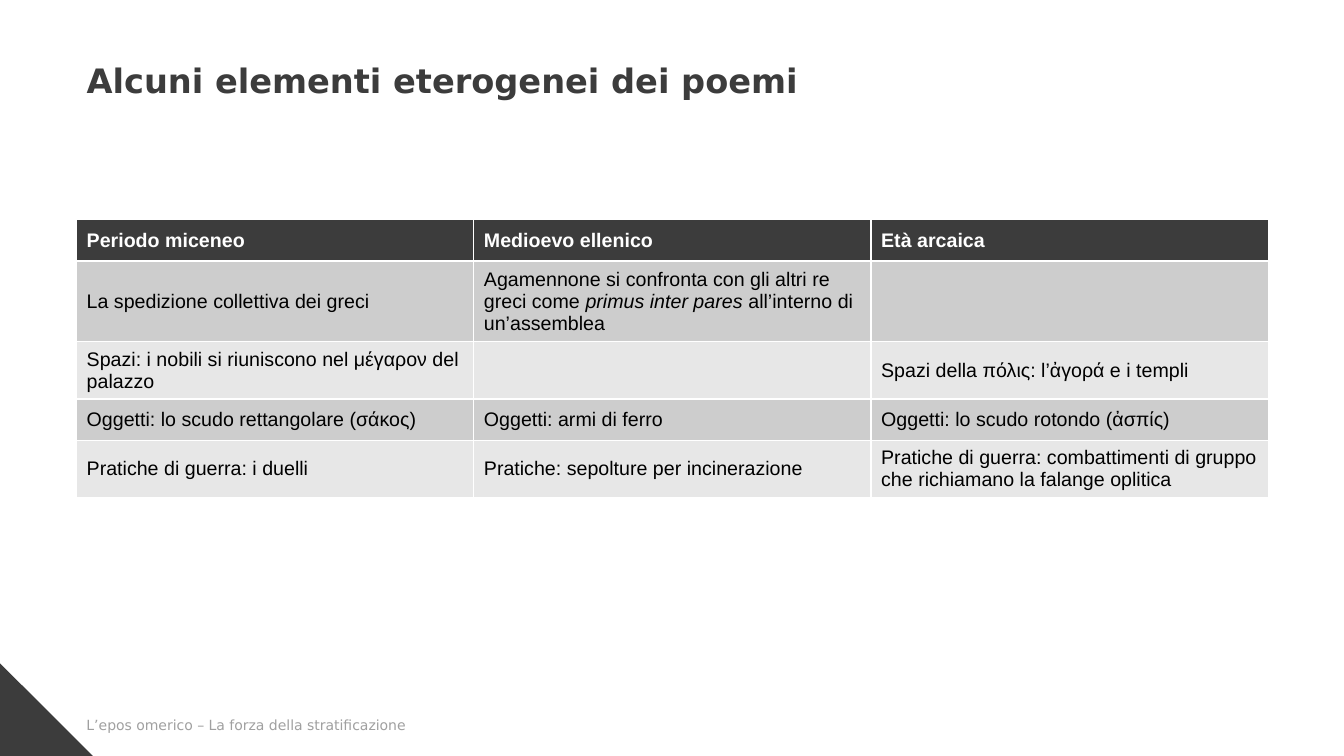
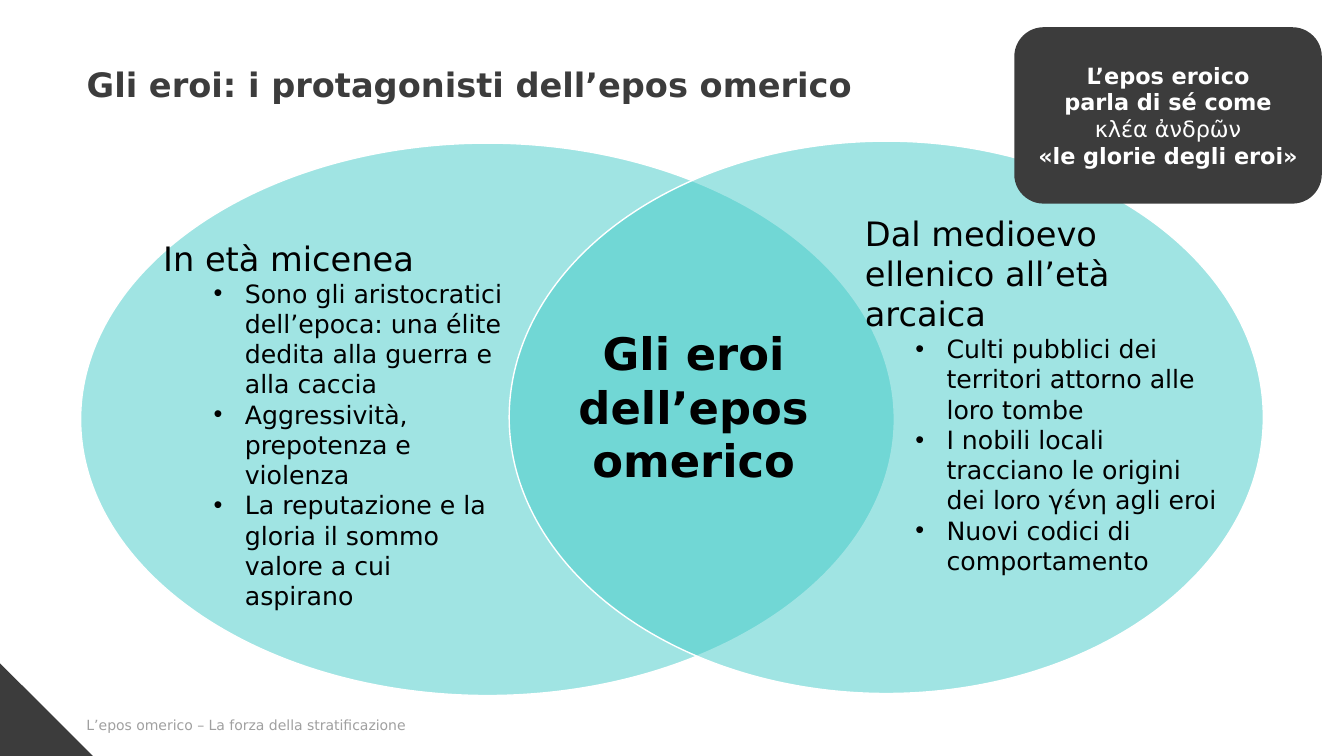
"""Build two slides on the layered origins of the Homeric epics and their heroes."""
from lxml import etree
from pptx import Presentation
from pptx.dml.color import RGBColor
from pptx.enum.shapes import MSO_SHAPE
from pptx.enum.text import MSO_ANCHOR, MSO_AUTO_SIZE, PP_ALIGN
from pptx.oxml.ns import qn
from pptx.util import Inches, Pt

OVAL, ROUNDED, TRIANGLE = MSO_SHAPE.OVAL, MSO_SHAPE.ROUNDED_RECTANGLE, MSO_SHAPE.RIGHT_TRIANGLE
TOP, MIDDLE = MSO_ANCHOR.TOP, MSO_ANCHOR.MIDDLE
LEFT, CENTER = PP_ALIGN.LEFT, PP_ALIGN.CENTER
COLORS = {
    "dark": "3C3C3C", "footer": "A0A0A0", "teal": "43CBC9", "white": "FFFFFF",
    "black": "000000", "band_odd": "CDCDCD", "band_even": "E7E7E7",
}
HEADING_FONT, TABLE_FONT = "DejaVu Sans", "Arial"
MARGIN = 0.76
FOOTER = "L’epos omerico – La forza della stratificazione"


def format_runs(para, size, color, bold=False, font=HEADING_FONT, align=LEFT):
    para.alignment = align
    for span in para.runs:
        span.font.name = font
        span.font.size = Pt(size)
        span.font.bold = bold
        span.font.color.rgb = RGBColor.from_string(COLORS[color])


def add_filled(page, kind, left, top, width, height, color):
    shape = page.shapes.add_shape(kind, Inches(left), Inches(top), Inches(width), Inches(height))
    shape.shadow.inherit = False
    shape.fill.solid()
    shape.fill.fore_color.rgb = RGBColor.from_string(COLORS[color])
    shape.line.fill.background()
    return shape


deck = Presentation()
deck.slide_width, deck.slide_height = Inches(13.33), Inches(7.5)

titles = [
    ("Alcuni elementi eterogenei dei poemi", 0.54),
    ("Gli eroi: i protagonisti dell’epos omerico", 0.58),
]
pages = []
for title_text, title_top in titles:
    page = deck.slides.add_slide(deck.slide_layouts[5])
    pages.append(page)
    add_filled(page, TRIANGLE, 0, 6.58, 0.92, 0.92, "dark")

    footer = page.shapes.add_textbox(Inches(MARGIN), Inches(6.9), Inches(11.7), Inches(0.6))
    footer.text_frame.word_wrap = True
    footer.text_frame.vertical_anchor = MIDDLE
    footer.text_frame.text = FOOTER
    footer.text_frame.paragraphs[0].line_spacing = 0.9
    format_runs(footer.text_frame.paragraphs[0], 10, "footer")

    title = page.shapes.title
    title.left, title.top = Inches(MARGIN), Inches(title_top)
    title.width, title.height = Inches(9.84), Inches(1.57)
    title.text_frame.text = title_text
    title.text_frame.auto_size = MSO_AUTO_SIZE.NONE
    title.text_frame.vertical_anchor = TOP
    format_runs(title.text_frame.paragraphs[0], 24, "dark", bold=True)

table_page, heroes_page = pages

rows = [
    ["Periodo miceneo", "Medioevo ellenico", "Età arcaica"],
    ["La spedizione collettiva dei greci",
     "Agamennone si confronta con gli altri re greci come *primus inter pares* all’interno di un’assemblea",
     ""],
    ["Spazi: i nobili si riuniscono nel μέγαρον del palazzo", "",
     "Spazi della πόλις: l’ἀγορά e i templi"],
    ["Oggetti: lo scudo rettangolare (σάκος)", "Oggetti: armi di ferro",
     "Oggetti: lo scudo rotondo (ἀσπίς)"],
    ["Pratiche di guerra: i duelli", "Pratiche: sepolture per incinerazione",
     "Pratiche di guerra: combattimenti di gruppo che richiamano la falange oplitica"],
]
row_height, column_width = 0.41, 3.94
periods = table_page.shapes.add_table(
    len(rows), len(rows[0]), Inches(MARGIN), Inches(2.18),
    Inches(column_width * len(rows[0])), Inches(row_height * len(rows))).table
for row_index, row in enumerate(rows):
    is_header = row_index == 0
    band = "dark" if is_header else "band_odd" if row_index % 2 else "band_even"
    for column_index, cell_text in enumerate(row):
        cell = periods.cell(row_index, column_index)
        cell.vertical_anchor = MIDDLE
        cell.fill.solid()
        cell.fill.fore_color.rgb = RGBColor.from_string(COLORS[band])
        if not cell_text:
            continue
        para = cell.text_frame.paragraphs[0]
        for part_index, part in enumerate(cell_text.split("*")):
            span = para.add_run()
            span.text = part
            span.font.italic = part_index % 2 == 1
        format_runs(para, 14, "white" if is_header else "black", is_header, TABLE_FONT)

for left, top, width in [(0.8, 1.42, 8.07), (5.05, 1.4, 7.48)]:
    ellipse = add_filled(heroes_page, OVAL, left, top, width, 5.48, "teal")
    ellipse.line.color.rgb = RGBColor.from_string(COLORS["white"])
    ellipse.line.width = Pt(1)
    fill_color = ellipse.fill._xPr.find(qn("a:solidFill"))[0]
    etree.SubElement(fill_color, qn("a:alpha"), val="50000")

callout = add_filled(heroes_page, ROUNDED, 10.06, 0.27, 3.05, 1.75, "dark")
callout.text_frame.word_wrap = True
callout.text_frame.vertical_anchor = MIDDLE
callout.text_frame.text = "L’epos eroico\nparla di sé come\nκλέα ἀνδρῶν\n«le glorie degli eroi»"
for line_index, para in enumerate(callout.text_frame.paragraphs):
    format_runs(para, 16, "white", bold=line_index != 2, align=CENTER)

hero_lists = [
    (8.48, 2.06, 3.78, 4.04, "Dal medioevo ellenico all’età arcaica", [
        "Culti pubblici dei territori attorno alle loro tombe",
        "I nobili locali tracciano le origini dei loro γένη agli eroi",
        "Nuovi codici di comportamento"]),
    (1.52, 2.31, 3.59, 4.14, "In età micenea", [
        "Sono gli aristocratici dell’epoca: una élite dedita alla guerra e alla caccia",
        "Aggressività, prepotenza e violenza",
        "La reputazione e la gloria il sommo valore a cui aspirano"]),
]
for left, top, width, height, heading, points in hero_lists:
    box = heroes_page.shapes.add_textbox(Inches(left), Inches(top), Inches(width), Inches(height))
    box.text_frame.word_wrap = True
    box.text_frame.text = heading
    format_runs(box.text_frame.paragraphs[0], 24, "black")
    for point in points:
        para = box.text_frame.add_paragraph()
        para.text = point
        para.level = 1
        properties = para._p.get_or_add_pPr()
        properties.set("marL", str(Inches(0.81)))
        properties.set("indent", str(Inches(-0.31)))
        bullet_font = etree.SubElement(properties, qn("a:buFont"))
        bullet_font.set("typeface", TABLE_FONT)
        etree.SubElement(properties, qn("a:buChar")).set("char", "•")
        format_runs(para, 18, "black")

center_box = heroes_page.shapes.add_textbox(Inches(5.54), Inches(3.18), Inches(2.68), Inches(1.72))
center_box.text_frame.word_wrap = True
center_box.text_frame.text = "Gli eroi\ndell’epos\nomerico"
for para in center_box.text_frame.paragraphs:
    format_runs(para, 32, "black", bold=True, align=CENTER)

deck.save("out.pptx")
